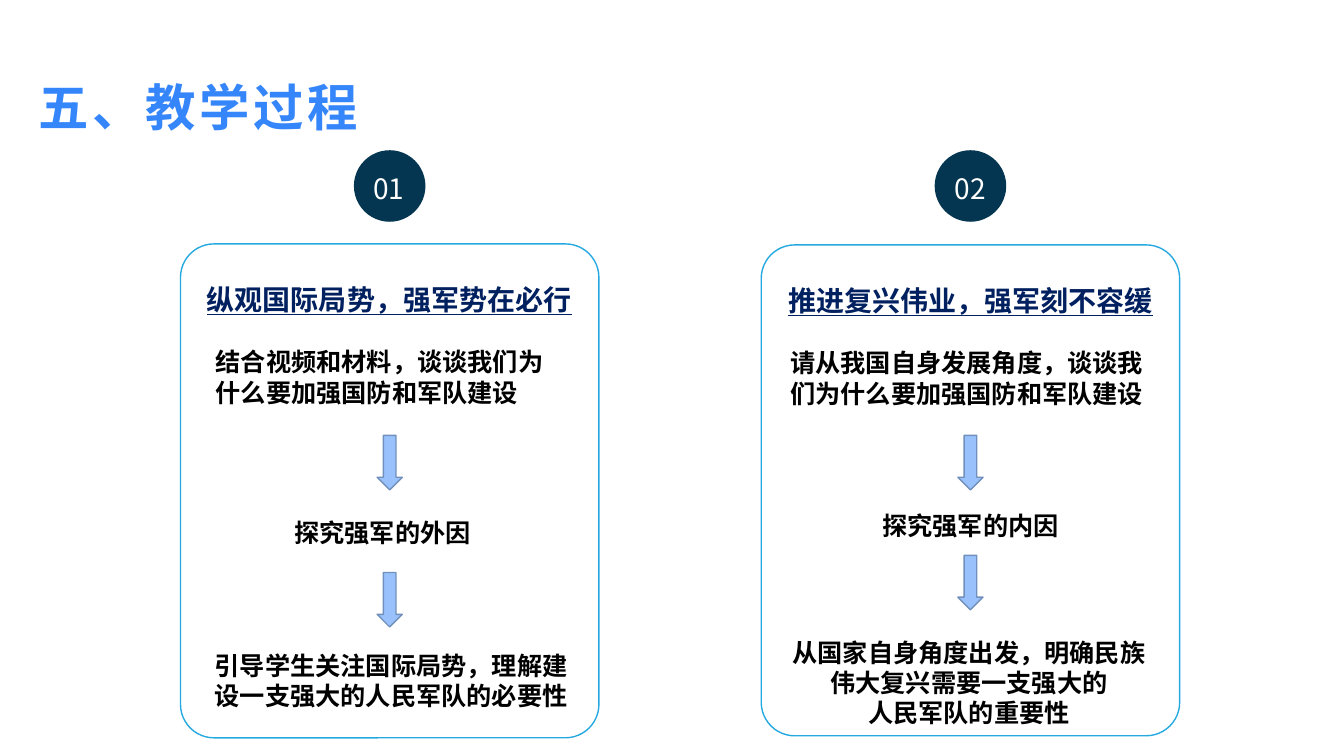
from lxml import etree
from pptx import Presentation
from pptx.dml.color import RGBColor
from pptx.enum import shapes, text
from pptx.oxml.ns import qn
from pptx.util import Inches, Pt

FONT = "Noto Sans CJK SC"
COLORS = {
    "title": "3586FB", "badge": "043651", "white": "FFFFFF", "heading": "002060",
    "body": "000000", "card": "25A9E0", "arrow": "99C2FD", "arrow_edge": "7190BB",
}
STYLES = {
    "title": {"size": Pt(36), "bold": True},
    "white": {"size": Pt(20)},
    "heading": {"size": Pt(20), "bold": True, "underline": True},
    "body": {"size": Pt(18), "bold": True},
}
LEFT, CENTER = text.PP_ALIGN.LEFT, text.PP_ALIGN.CENTER

TITLE = ("五、教学过程", (0.31, 0.68, 5.42, 0.76))
COLUMNS = [
    {
        "card": (1.79, 2.42, 4.15, 4.9),
        "arrow_tops": (4.32, 5.68),
        "texts": [
            (["01"], (3.56, 1.65, 0.59, 0.44), "white", CENTER, 1),
            (["纵观国际局势，强军势在必行"], (1.89, 2.42, 3.94, 0.77), "heading", CENTER, 2),
            (["结合视频和材料，谈谈我们为什么要加强国防和军队建设"],
             (2.04, 3.39, 3.69, 0.71), "body", LEFT, 1),
            (["探究强军的外因"], (2.82, 4.93, 2.12, 0.55), "body", LEFT, 1.5),
            (["引导学生关注国际局势，理解建设一支强大的人民军队的必要性"],
             (1.91, 6.4, 3.94, 0.71), "body", CENTER, 1),
        ],
    },
    {
        "card": (7.55, 2.43, 4.15, 4.87),
        "arrow_tops": (4.32, 5.51),
        "texts": [
            (["02"], (9.33, 1.65, 0.59, 0.44), "white", CENTER, 1),
            (["推进复兴伟业，强军刻不容缓"], (7.55, 2.43, 4.15, 0.77), "heading", CENTER, 2),
            (["请从我国自身发展角度，谈谈我们为什么要加强国防和军队建设"],
             (7.74, 3.4, 3.74, 0.71), "body", LEFT, 1),
            (["探究强军的内因"], (8.13, 5.01, 2.99, 0.4), "body", CENTER, 1),
            (["从国家自身角度出发，明确民族伟大复兴需要一支强大的", "人民军队的重要性"],
             (7.74, 6.27, 3.74, 1.01), "body", CENTER, 1),
        ],
    },
]
BADGE_SIZE, BADGE_TOP = 0.71, 1.49
ARROW_WIDTH, ARROW_HEIGHT = 0.25, 0.54


def add_outline(slide, kind, box, fill=None, edge=None):
    outline = slide.shapes.add_shape(kind, *map(Inches, box))
    outline.shadow.inherit = False
    if fill:
        outline.fill.solid()
        outline.fill.fore_color.rgb = RGBColor.from_string(COLORS[fill])
    else:
        outline.fill.background()
    if edge:
        outline.line.color.rgb = RGBColor.from_string(COLORS[edge])
        outline.line.width = Pt(1)
    else:
        outline.line.fill.background()
    return outline


def add_words(slide, lines, box, style, align=LEFT, spacing=1):
    frame = slide.shapes.add_textbox(*map(Inches, box)).text_frame
    frame.word_wrap = True
    for index, line in enumerate(lines):
        paragraph = frame.paragraphs[0] if index == 0 else frame.add_paragraph()
        paragraph.alignment = align
        paragraph.line_spacing = spacing
        run = paragraph.add_run()
        run.text = line
        for key, value in STYLES[style].items():
            setattr(run.font, key, value)
        run.font.color.rgb = RGBColor.from_string(COLORS[style])
        run.font.name = FONT
        east_asian = etree.SubElement(run.font._element, qn("a:ea"))
        east_asian.set("typeface", FONT)
    return frame


def add_column(slide, column):
    left, top, width, height = column["card"]
    middle = left + width / 2
    add_outline(slide, shapes.MSO_SHAPE.OVAL,
                (middle - BADGE_SIZE / 2, BADGE_TOP, BADGE_SIZE, BADGE_SIZE), "badge")
    card = add_outline(slide, shapes.MSO_SHAPE.ROUNDED_RECTANGLE, column["card"], edge="card")
    card.adjustments[0] = 0.08
    for arrow_top in column["arrow_tops"]:
        add_outline(slide, shapes.MSO_SHAPE.DOWN_ARROW,
                    (middle - ARROW_WIDTH / 2, arrow_top, ARROW_WIDTH, ARROW_HEIGHT),
                    "arrow", "arrow_edge")
    for words in column["texts"]:
        add_words(slide, *words)


def main():
    deck = Presentation()
    deck.slide_width, deck.slide_height = Inches(13.33), Inches(7.5)
    slide = deck.slides.add_slide(deck.slide_layouts[6])
    for column in COLUMNS:
        add_column(slide, column)
    heading, box = TITLE
    title = add_words(slide, [heading], box, "title")
    margins = {"margin_left": 0.07, "margin_right": 0.07, "margin_top": 0.03, "margin_bottom": 0.03}
    for side, inset in margins.items():
        setattr(title, side, Inches(inset))
    title.vertical_anchor = text.MSO_ANCHOR.MIDDLE
    title.paragraphs[0].runs[0].font._element.set("spc", "240")
    deck.save("out.pptx")


if __name__ == "__main__":
    main()
